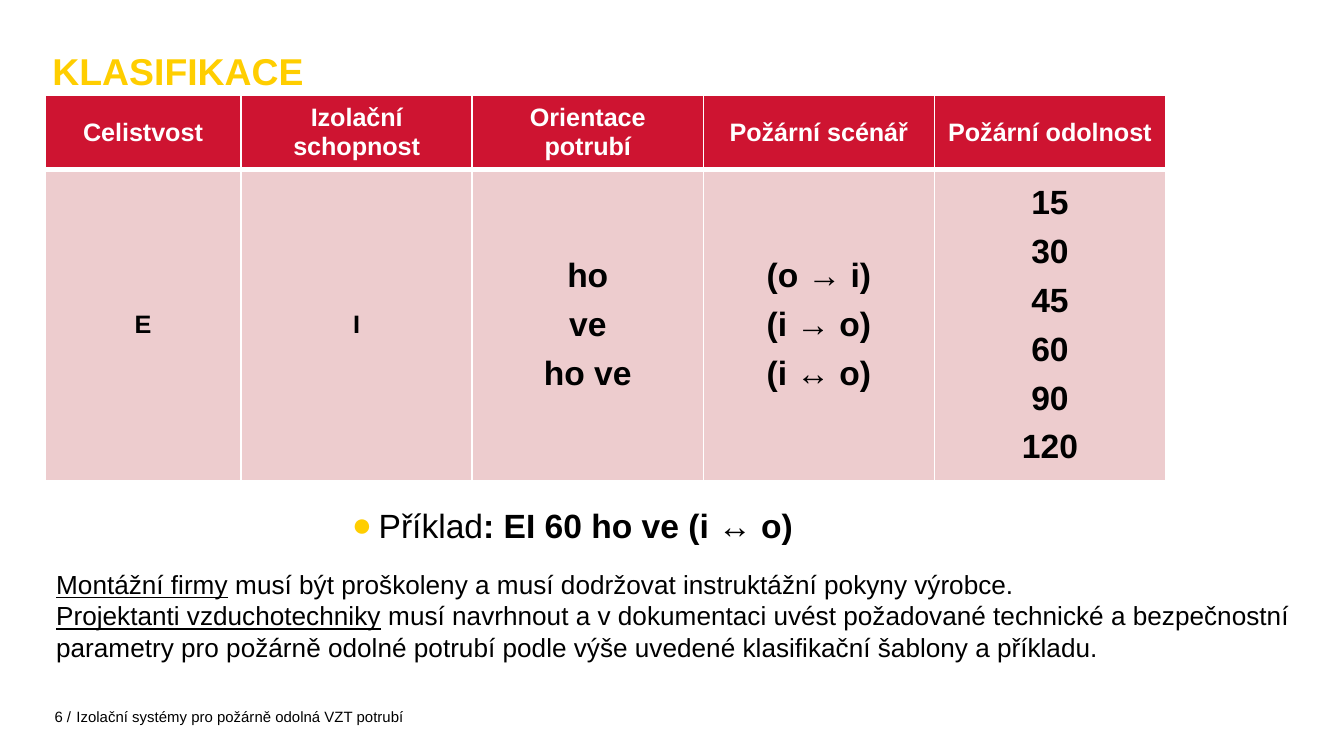
import pptx
import pptx.util
import pptx.dml.color
import pptx.enum.text
from lxml import etree
from dataclasses import dataclass
from pptx.oxml.ns import qn

Pt = pptx.util.Pt
PP_ALIGN = pptx.enum.text.PP_ALIGN
MIDDLE = pptx.enum.text.MSO_ANCHOR.MIDDLE


@dataclass(frozen=True)
class Theme:
    font: str = "Arial"
    yellow: str = "FFCE00"
    red: str = "CE1431"
    pink: str = "EDCCCE"
    black: str = "000000"
    white: str = "FFFFFF"
    title: float = 20
    example: float = 18
    body: float = 14
    cell: float = 13.5
    footer: float = 8


THEME = Theme()

HEADINGS = ["Celistvost", "Izolační schopnost", "Orientace potrubí",
            "Požární scénář", "Požární odolnost"]
CLASSES = [
    (["E"], THEME.cell),
    (["I"], THEME.cell),
    (["ho", "ve", "ho ve"], THEME.example),
    (["(o → i)", "(i → o)", "(i ↔ o)"], THEME.example),
    (["15", "30", "45", "60", "90", "120"], THEME.example),
]
DUTIES = [
    ("Montážní firmy",
     " musí být proškoleny a musí dodržovat instruktážní pokyny výrobce."),
    ("Projektanti vzduchotechniky",
     " musí navrhnout a v dokumentaci uvést požadované technické a bezpečnostní "
     "parametry pro požárně odolné potrubí podle výše uvedené klasifikační "
     "šablony a příkladu."),
]


def rgb(color):
    return pptx.dml.color.RGBColor.from_string(color)


def style(run, size, color=THEME.black, bold=False, underline=False):
    run.font.name = THEME.font
    run.font.size = Pt(size)
    run.font.color.rgb = rgb(color)
    run.font.bold = bold
    run.font.underline = underline


def add_run(paragraph, text, size, **looks):
    run = paragraph.add_run()
    run.text = text
    style(run, size, **looks)


def add_frame(slide, box, margins=(7.2, 3.6, 7.2, 3.6)):
    frame = slide.shapes.add_textbox(*(Pt(length) for length in box)).text_frame
    frame.word_wrap = True
    (frame.margin_left, frame.margin_top,
     frame.margin_right, frame.margin_bottom) = (Pt(m) for m in margins)
    return frame


def add_title(slide, box):
    heading = add_frame(slide, box, (0, 0, 7.2, 0)).paragraphs[0]
    add_run(heading, "KLASIFIKACE", THEME.title, color=THEME.yellow, bold=True)


def set_borders(cell, widths):
    properties = cell._tc.get_or_add_tcPr()
    for side, width in zip("LRTB", widths):
        line = etree.SubElement(properties, qn(f"a:ln{side}"), w=str(Pt(width)))
        fill = etree.SubElement(line, qn("a:solidFill"))
        etree.SubElement(fill, qn("a:srgbClr"), val=THEME.white)


def fill_cell(cell, lines, size, color, background, borders):
    set_borders(cell, borders)
    cell.fill.solid()
    cell.fill.fore_color.rgb = rgb(background)
    cell.vertical_anchor = MIDDLE
    cell.text_frame.text = "\n".join(lines)
    for index, paragraph in enumerate(cell.text_frame.paragraphs):
        paragraph.alignment = PP_ALIGN.CENTER
        paragraph.space_before = Pt(6 if index else 0)
        style(paragraph.runs[0], size, color=color, bold=True)


def add_classes(slide, box):
    left, top, width, height = box
    first_width, header_height = 105.2, 39.6
    table = slide.shapes.add_table(
        2, len(HEADINGS), Pt(left), Pt(top), Pt(width), Pt(height)).table
    other_width = (width - first_width) / (len(HEADINGS) - 1)
    for index, column in enumerate(table.columns):
        column.width = Pt(other_width if index else first_width)
    table.rows[0].height = Pt(header_height)
    table.rows[1].height = Pt(height - header_height)
    for index, (heading, (values, size)) in enumerate(zip(HEADINGS, CLASSES)):
        fill_cell(table.cell(0, index), [heading], THEME.cell,
                  THEME.white, THEME.red, (1, 1, 1, 3))
        fill_cell(table.cell(1, index), values, size,
                  THEME.black, THEME.pink, (1, 1, 3, 1))


def add_example(slide, box):
    example = add_frame(slide, box).paragraphs[0]
    example.line_spacing = 0.9
    example.space_after = Pt(10)
    # Yellow bullet with a hanging indent
    properties = example._p.get_or_add_pPr()
    properties.set("marL", str(Pt(14.4)))
    properties.set("indent", str(-Pt(14.4)))
    bullet_color = etree.SubElement(properties, qn("a:buClr"))
    etree.SubElement(bullet_color, qn("a:srgbClr"), val=THEME.yellow)
    etree.SubElement(properties, qn("a:buFont"), typeface=THEME.font)
    etree.SubElement(properties, qn("a:buChar"), char="●")
    add_run(example, "Příklad", THEME.example)
    add_run(example, ": EI 60 ho ve (i ↔ o)", THEME.example, bold=True)


def add_duties(slide, box):
    frame = add_frame(slide, box)
    for index, (who, duty) in enumerate(DUTIES):
        paragraph = frame.add_paragraph() if index else frame.paragraphs[0]
        add_run(paragraph, who, THEME.body, underline=True)
        add_run(paragraph, duty, THEME.body)


def add_footer(slide, box):
    left, top, width, height = box
    number_width, overlap = 39.6, 2.9
    text_left = left + number_width - overlap
    parts = [
        ("6 /", left, number_width, PP_ALIGN.RIGHT),
        ("Izolační systémy pro požárně odolná VZT potrubí",
         text_left, left + width - text_left, PP_ALIGN.LEFT),
    ]
    for text, part_left, part_width, alignment in parts:
        frame = add_frame(slide, (part_left, top, part_width, height),
                          (2.9, 0, 2.9, 0))
        frame.vertical_anchor = MIDDLE
        frame.paragraphs[0].alignment = alignment
        add_run(frame.paragraphs[0], text, THEME.footer)


def main():
    deck = pptx.Presentation()
    deck.slide_width, deck.slide_height = Pt(720), Pt(405)
    slide = deck.slides.add_slide(deck.slide_layouts[6])

    add_title(slide, (28.1, 26, 677.5, 24.5))
    add_classes(slide, (24, 51.1, 600.4, 197.6))
    add_example(slide, (181.4, 269.3, 324, 31.7))
    add_duties(slide, (23, 301, 680.4, 58.3))
    add_footer(slide, (1.4, 379.4, 265, 9.4))

    deck.save("out.pptx")


if __name__ == "__main__":
    main()
